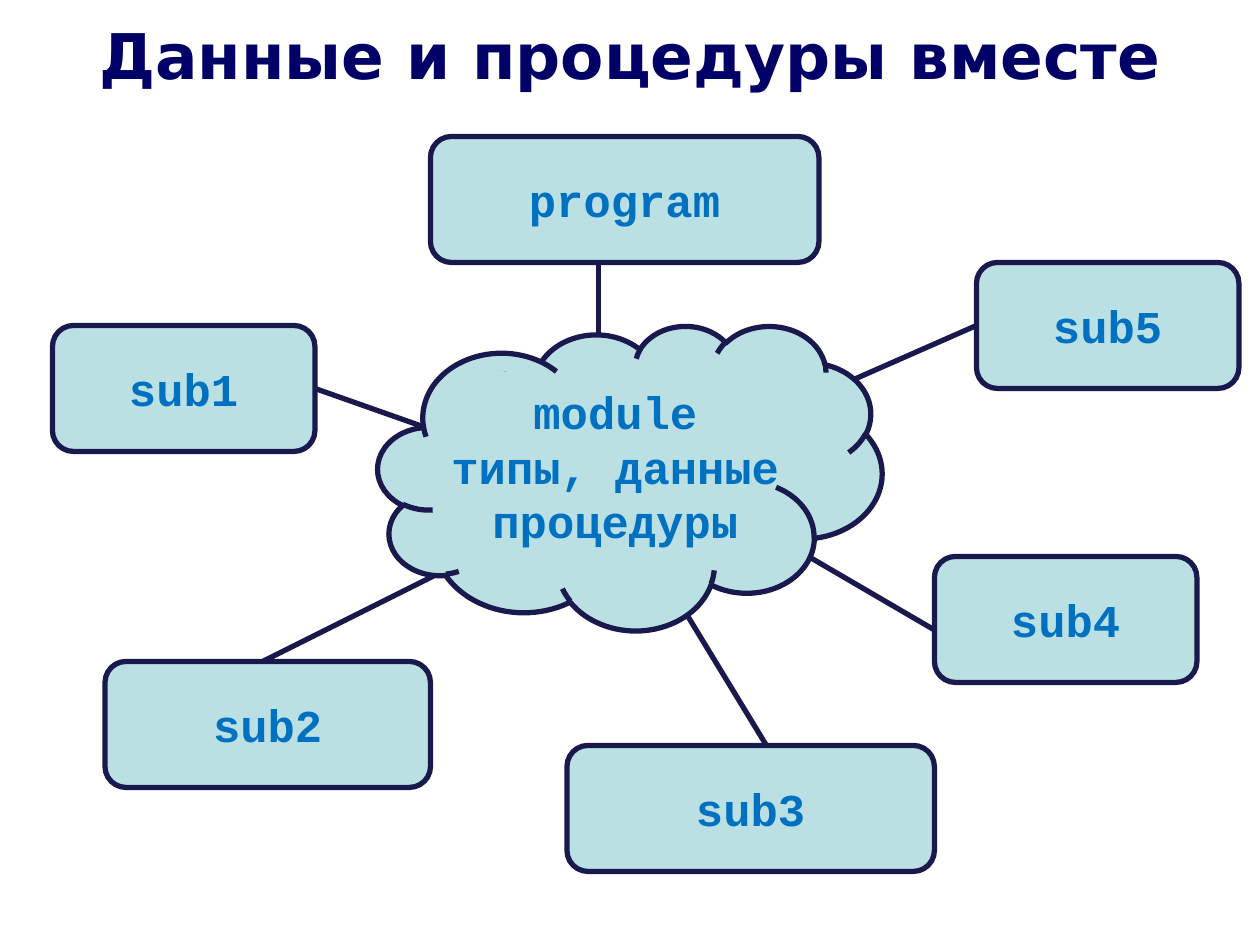
from pptx import Presentation, util as u
from pptx.dml.color import RGBColor
from pptx.enum import shapes as s, text as t
from pptx.oxml.ns import qn
from lxml import etree

# Content: places are columns and rows of a grid of 1/12 inch
TITLE = "Данные и процедуры вместе"
CORE = ["module", "типы, данные", "процедуры"]
HIGH = 12
BOXES = [  # name, column, row, width, line start, line end
    ("program", 41, 13, 37, (57, 43), (57, 25)),
    ("sub1", 5, 31, 25, (47, 43), (30, 37)),
    ("sub2", 10, 63, 31, (53, 49), (25, 63)),
    ("sub5", 93, 25, 25, (93, 31), (68, 42)),
    ("sub4", 89, 53, 25, (89, 60), (65, 46)),
    ("sub3", 54, 71, 35, (59, 48), (73, 71)),
]
CLOUD = (36, 31, 48, 29)
PATCH = (40.56, 36.36, 21.72, 10.68)
LABEL = (41.64, 36, 33.96, 16.92)
COLORS = {"title": "000066", "text": "0070C0", "fill": "BBE0E3", "line": "19194D"}
HEAD = {"name": "DejaVu Sans", "size": u.Pt(36), "bold": True}
CODE = {"name": "Courier New", "size": u.Pt(26), "bold": True}


def grid(*cells):
    return [u.Inches(c / 12) for c in cells]


def color(key):
    return RGBColor.from_string(COLORS[key])


def write(shape, lines, font, key, **frame):
    tf = shape.text_frame
    for name, value in frame.items():
        setattr(tf, name, value)
    tf.text = "\n".join(lines)
    for par in tf.paragraphs:
        par.alignment = t.PP_ALIGN.CENTER
        for name, value in font.items():
            setattr(par.font, name, value)
        par.font.color.rgb = color(key)


def stroke(line):
    line.color.rgb = color("line")
    line.width = u.Pt(3)


def block(kind, place, edge=True):
    shape = slide.shapes.add_shape(kind, *grid(*place))
    shape.shadow.inherit = False
    shape.fill.solid()
    shape.fill.fore_color.rgb = color("fill")
    if edge:
        stroke(shape.line)
    else:
        shape.line.fill.background()
    return shape


prs = Presentation()
prs.slide_width, prs.slide_height = u.Inches(10), u.Inches(7.5)
slide = prs.slides.add_slide(prs.slide_layouts[5])

# Title
head = slide.shapes.title
head.left, head.top, head.width, head.height = grid(0, 1, 120, 8.4)
write(head, [TITLE], HEAD, "title", word_wrap=True,
      vertical_anchor=t.MSO_ANCHOR.TOP, auto_size=t.MSO_AUTO_SIZE.SHAPE_TO_FIT_TEXT)

# Boxes around the module
for name, col, row, wide, *_ in BOXES:
    box = block(s.MSO_SHAPE.ROUNDED_RECTANGLE, (col, row, wide, HIGH))
    write(box, [name], CODE, "text", word_wrap=False,
          vertical_anchor=t.MSO_ANCHOR.MIDDLE)

# Lines to the boxes
for *_, start, end in BOXES:
    link = slide.shapes.add_connector(s.MSO_CONNECTOR.STRAIGHT, *grid(*start, *end))
    stroke(link.line)
    etree.SubElement(link.line._get_or_add_ln().getparent(), qn("a:effectLst"))

# Cloud, with a patch that covers its tail
cloud = block(s.MSO_SHAPE.CLOUD_CALLOUT, CLOUD)
cloud.adjustments[0], cloud.adjustments[1] = -0.04, -0.04
block(s.MSO_SHAPE.OVAL, PATCH, edge=False).rotation = 22

# Text on the cloud
label = slide.shapes.add_textbox(*grid(*LABEL))
write(label, CORE, CODE, "text", word_wrap=False,
      auto_size=t.MSO_AUTO_SIZE.SHAPE_TO_FIT_TEXT)

prs.save("out.pptx")
